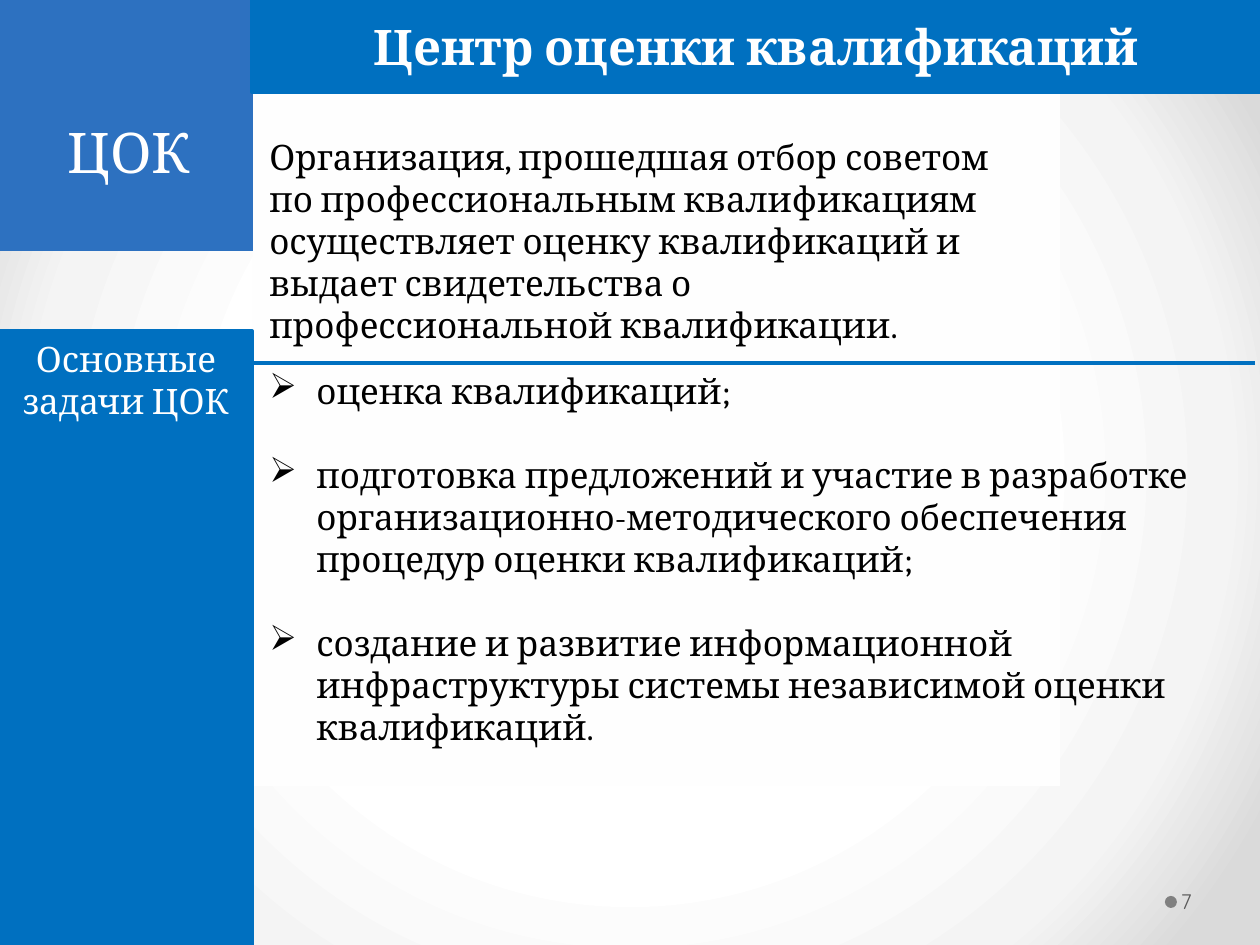
from lxml import etree
from pptx import Presentation
from pptx.dml.color import RGBColor
from pptx.enum.shapes import MSO_CONNECTOR, MSO_SHAPE
from pptx.enum.text import MSO_ANCHOR, PP_ALIGN
from pptx.oxml import parse_xml
from pptx.oxml.ns import nsdecls, qn
from pptx.util import Emu, Pt

PX = 914400 // 126
COLORS = {"blue": "0070C0", "tile": "2D71C0", "panel": "FEFEFE", "dot": "808080",
          "number": "595959", "white": "FFFFFF", "black": "000000"}
BACKGROUND_STOPS = [(50, "FFFFFF"), (76, "F4F4F4"), (92, "DADADA")]

HEADING = "Центр оценки квалификаций"
ABBREVIATION = "ЦОК"
TASKS_LABEL = "Основные задачи ЦОК"
DEFINITION = ("Организация, прошедшая отбор советом по профессиональным квалификациям "
              "осуществляет оценку квалификаций и выдает свидетельства о "
              "профессиональной квалификации.")
TASKS = [
    "оценка квалификаций;",
    "подготовка предложений и участие в разработке организационно-методического "
    "обеспечения процедур оценки квалификаций;",
    "создание и развитие информационной инфраструктуры системы независимой оценки "
    "квалификаций.",
]
INDENT = 47
TASK_GAP = 24


def px(*values):
    return [Emu(v * PX) for v in values]


def rgb(name):
    return RGBColor.from_string(COLORS[name])


def set_background(slide):
    stops = "".join(f'<a:gs pos="{pos * 1000}"><a:srgbClr val="{color}"/></a:gs>'
                    for pos, color in BACKGROUND_STOPS)
    slide.background.fill.solid()
    solid = slide.background._cSld.find(".//" + qn("a:solidFill"))
    solid.getparent().replace(solid, parse_xml(
        f'<a:gradFill {nsdecls("a")} rotWithShape="1"><a:gsLst>{stops}</a:gsLst>'
        '<a:path path="circle"><a:fillToRect l="50000" t="50000" r="50000" b="50000"/>'
        '</a:path></a:gradFill>'))


def add_block(slide, box, fill, kind=MSO_SHAPE.RECTANGLE, outlined=False):
    s = slide.shapes.add_shape(kind, *px(*box))
    s.shadow.inherit = False
    s.fill.solid()
    s.fill.fore_color.rgb = rgb(fill)
    if outlined:
        s.line.color.rgb = rgb(fill)
        s.line.width = Pt(2.25)
    else:
        s.line.fill.background()
    return s


def add_text_box(slide, box):
    return slide.shapes.add_textbox(*px(*box))


def write(s, text, size, color, align=PP_ALIGN.LEFT, anchor=MSO_ANCHOR.TOP,
          font="Cambria", bold=False):
    """Fill a shape with text, one paragraph per line, and return its text frame."""
    tf = s.text_frame
    tf.text = text
    tf.word_wrap = True
    tf.vertical_anchor = anchor
    for p in tf.paragraphs:
        p.alignment = align
        for r in p.runs:
            r.font.name = font
            r.font.size = Pt(size)
            r.font.bold = bold
            r.font.color.rgb = rgb(color)
    return tf


def add_bullet(p):
    pPr = p._p.get_or_add_pPr()
    pPr.set("marL", str(INDENT * PX))
    pPr.set("indent", str(-INDENT * PX))
    etree.SubElement(pPr, qn("a:buChar")).set("char", "➢")


def add_rule(slide, x1, x2, y):
    line = slide.shapes.add_connector(MSO_CONNECTOR.STRAIGHT, *px(x1, y, x2, y))
    line.line.color.rgb = rgb("blue")
    line.line.width = Pt(2.75)
    etree.SubElement(line._element.spPr, qn("a:effectLst"))


def main():
    prs = Presentation()
    prs.slide_width, prs.slide_height = px(1260, 945)
    slide = prs.slides.add_slide(prs.slide_layouts[6])
    set_background(slide)

    add_block(slide, (1165, 896, 12, 12), "dot", MSO_SHAPE.OVAL)
    add_block(slide, (253, 0, 807, 786), "panel")
    add_block(slide, (0, -1, 253, 252), "tile")

    tf = write(add_text_box(slide, (1177, 876, 77, 50)), "7", 12, "number",
               anchor=MSO_ANCHOR.MIDDLE, font="Quicksand")
    tf.margin_left = Emu(4 * PX)
    tf.margin_right = Emu(6 * PX)

    write(add_block(slide, (252, 0, 1008, 92), "blue", outlined=True), HEADING, 28,
          "white", PP_ALIGN.CENTER, MSO_ANCHOR.MIDDLE, bold=True)

    tf = write(add_text_box(slide, (25, 29, 209, 209)), ABBREVIATION, 32, "white",
               PP_ALIGN.CENTER, MSO_ANCHOR.MIDDLE)
    tf.paragraphs[0].line_spacing = Pt(58)

    write(add_block(slide, (0, 331, 252, 614), "blue", outlined=True), TASKS_LABEL, 20,
          "white", PP_ALIGN.CENTER)

    tf = write(add_text_box(slide, (257, 78, 782, 296)), DEFINITION, 20, "black")
    tf.margin_top = Emu(57 * PX)

    add_rule(slide, 247, 1255, 363)

    tf = write(add_text_box(slide, (257, 363, 979, 432)), "\n".join(TASKS), 20, "black")
    for i, p in enumerate(tf.paragraphs):
        if i:
            p.space_before = Pt(TASK_GAP)
        add_bullet(p)

    prs.save("out.pptx")


if __name__ == "__main__":
    main()
